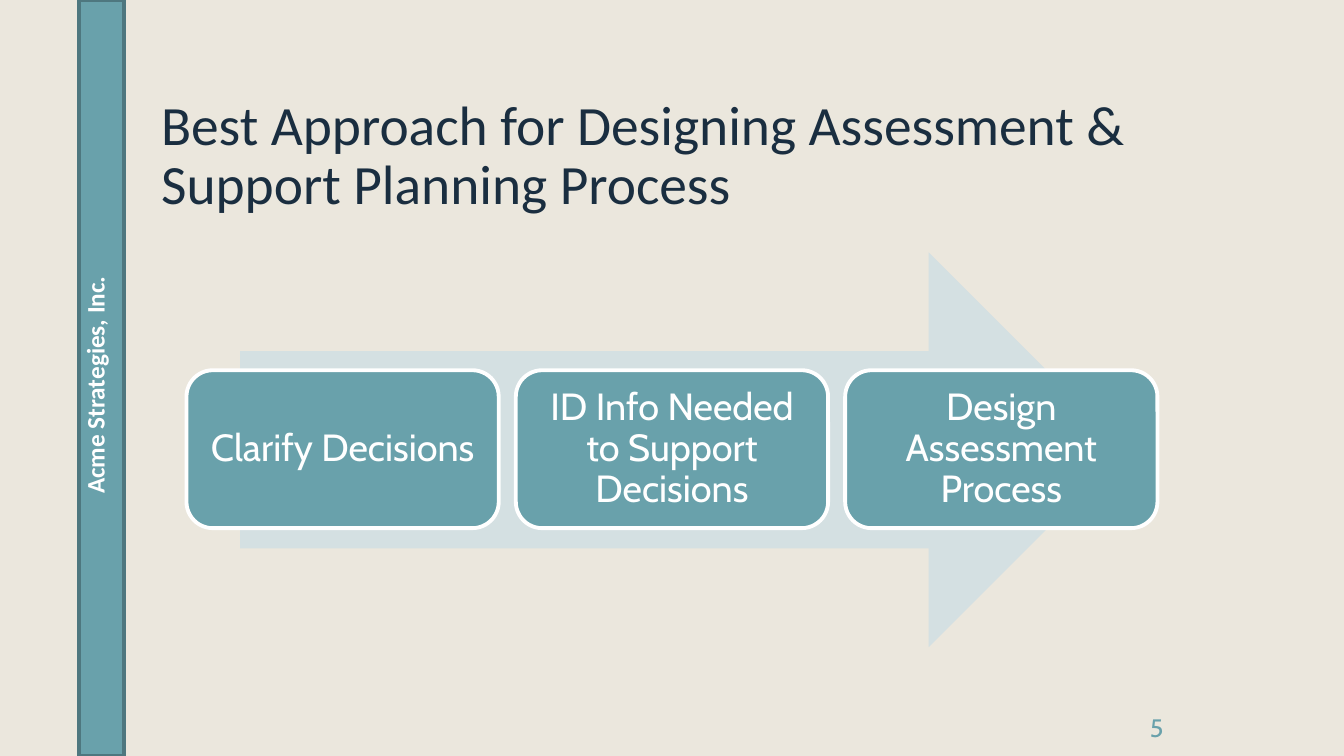
from dataclasses import dataclass

from pptx import Presentation
from pptx import util as u
from pptx.dml.color import RGBColor
from pptx.enum import shapes, text

CREAM = RGBColor(0xEB, 0xE7, 0xDD)
TEAL = RGBColor(0x69, 0xA1, 0xAB)
DARK_TEAL = RGBColor(0x4E, 0x77, 0x7F)
PALE_BLUE = RGBColor(0xD4, 0xE0, 0xE2)
NAVY = RGBColor(0x1A, 0x2E, 0x40)
WHITE = RGBColor(0xFF, 0xFF, 0xFF)

STEPS = [
    "Clarify Decisions",
    "ID Info Needed to Support Decisions",
    "Design Assessment Process",
]
STEP_LEFT = 4.7
STEP_PITCH = 8.3


@dataclass
class Box:
    """Position and size in centimetres."""
    left: float
    top: float
    width: float
    height: float

    def lengths(self) -> list[u.Length]:
        return [u.Cm(n) for n in (self.left, self.top, self.width, self.height)]


@dataclass
class Style:
    font: str
    size: float
    color: RGBColor
    bold: bool = False
    align: text.PP_ALIGN = text.PP_ALIGN.LEFT
    line_spacing: float = 1.0


TITLE = Style("Calibri", 39.6, NAVY, line_spacing=0.89)
SIDE_LABEL = Style("Calibri", 18, WHITE, bold=True, align=text.PP_ALIGN.CENTER)
PAGE_NUMBER = Style("Cabin", 18, TEAL)
STEP = Style("Cabin", 27, WHITE, align=text.PP_ALIGN.CENTER, line_spacing=0.9)


def write(shape, wording: str, style: Style) -> None:
    shape.text_frame.word_wrap = True
    paragraph = shape.text_frame.paragraphs[0]
    paragraph.text = wording
    paragraph.alignment = style.align
    paragraph.line_spacing = style.line_spacing
    paragraph.font.name = style.font
    paragraph.font.size = u.Pt(style.size)
    paragraph.font.bold = style.bold
    paragraph.font.color.rgb = style.color


def add_text(slide, box: Box, wording: str, style: Style):
    shape = slide.shapes.add_textbox(*box.lengths())
    write(shape, wording, style)
    return shape


def add_block(slide, kind: shapes.MSO_SHAPE, box: Box, fill: RGBColor,
              line: RGBColor | None = None):
    """Add a filled preset shape, outlined only when a line colour is given."""
    shape = slide.shapes.add_shape(kind, *box.lengths())
    shape.shadow.inherit = False
    shape.fill.solid()
    shape.fill.fore_color.rgb = fill
    if line is None:
        shape.line.fill.background()
    else:
        shape.line.color.rgb = line
        shape.line.width = u.Pt(2.75)
    return shape


def add_step(slide, index: int, wording: str) -> None:
    box = Box(STEP_LEFT + index * STEP_PITCH, 9.33, 7.87, 3.98)
    shape = add_block(slide, shapes.MSO_SHAPE.ROUNDED_RECTANGLE, box, TEAL, WHITE)
    frame = shape.text_frame
    frame.margin_left = frame.margin_right = u.Cm(0.28)
    frame.margin_top = frame.margin_bottom = u.Cm(0.28)
    frame.vertical_anchor = text.MSO_ANCHOR.MIDDLE
    write(shape, wording, STEP)


def main() -> None:
    presentation = Presentation()
    presentation.slide_width = u.Cm(33.87)
    presentation.slide_height = u.Cm(19.05)
    slide = presentation.slides.add_slide(presentation.slide_layouts[6])
    slide.background.fill.solid()
    slide.background.fill.fore_color.rgb = CREAM

    add_block(slide, shapes.MSO_SHAPE.RECTANGLE, Box(2, 0, 1.12, 19.05), TEAL, DARK_TEAL)
    add_text(slide, Box(28.73, 17.83, 1.4, 1.02), "5", PAGE_NUMBER)
    side_label = add_text(slide, Box(1.88, 2.34, 1.27, 14.73),
                          "Acme Strategies, Inc.", SIDE_LABEL)
    side_label.text_frame._txBody.bodyPr.set("vert", "vert270")

    add_block(slide, shapes.MSO_SHAPE.RIGHT_ARROW, Box(6.05, 6.36, 22.33, 9.95), PALE_BLUE)
    for index, wording in enumerate(STEPS):
        add_step(slide, index, wording)

    add_text(slide, Box(3.81, 2.34, 26.34, 2.49),
             "Best Approach for Designing Assessment & Support Planning Process", TITLE)
    presentation.save("out.pptx")


if __name__ == "__main__":
    main()
